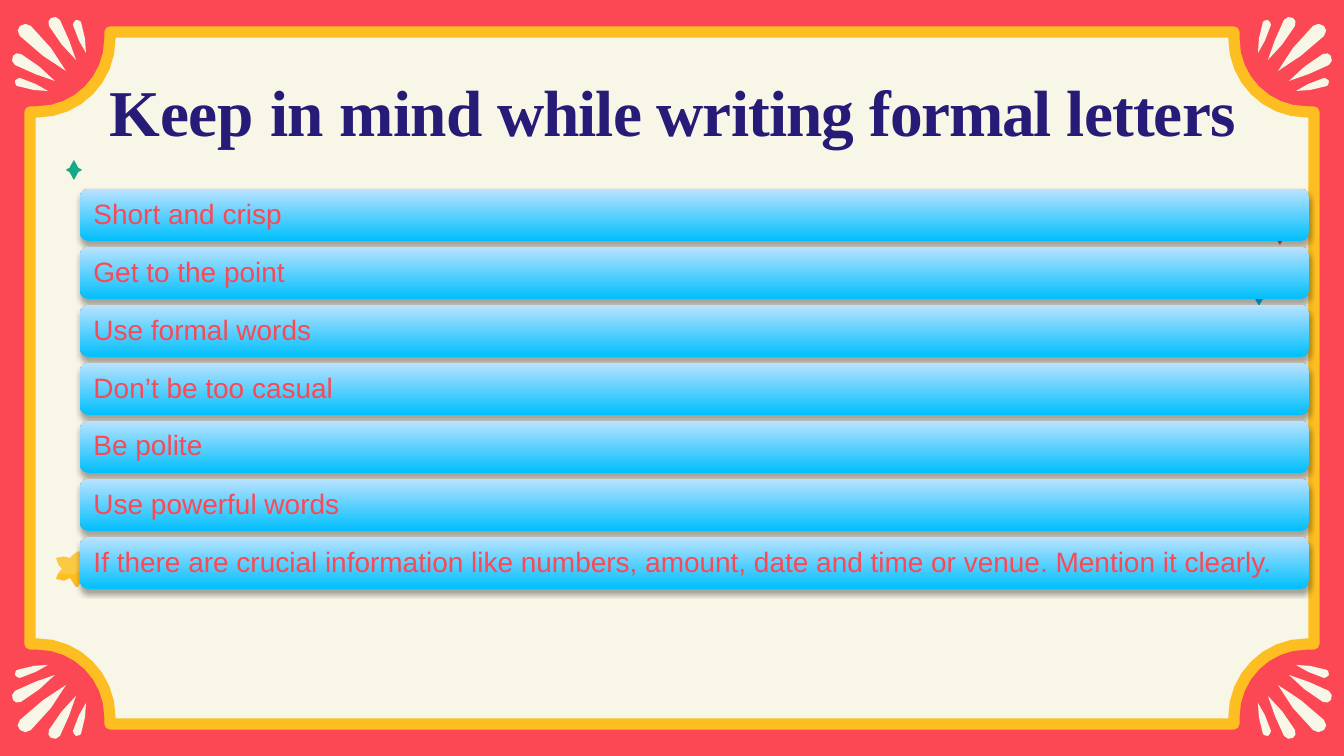
from dataclasses import dataclass

from lxml.etree import SubElement
from pptx import Presentation
from pptx.dml.color import RGBColor
from pptx.enum.shapes import MSO_SHAPE
from pptx.enum.text import MSO_ANCHOR, MSO_AUTO_SIZE, PP_ALIGN
from pptx.oxml.ns import qn
from pptx.util import Emu, Pt

WIDTH, HEIGHT = 1344, 756
EMU_PER_PX = 9144000 / WIDTH


@dataclass(frozen=True)
class Theme:
    red: str = "FB4854"
    cream: str = "F8F6E7"
    petal: str = "F7F6E7"
    gold: str = "FCBE20"
    blue: str = "03BDF9"
    green: str = "15A987"
    navy: str = "261B76"
    bar_bottom: str = "00BFFC"
    bar_top: str = "BAE2FF"
    title_font: str = "Times New Roman"
    body_font: str = "Arial"
    title_size: int = 35
    body_size: int = 15


THEME = Theme()

# Title pieces with their letter spacing in hundredths of a point
TITLE = [("Keep ", -10), ("in ", -30), ("mind while writing ", -50),
         ("formal ", -70), ("letters", -50)]
TIPS = [
    "Short and crisp",
    "Get to the point",
    "Use formal words",
    "Don’t be too casual",
    "Be polite",
    "Use powerful words",
    "If there are crucial information like numbers, amount, date and time "
    "or venue. Mention it clearly.",
]

# Bezier outlines: a start point, then three points for each curve
MIDDLE_PETAL = [(20, 36), (23, 39), (63, 74), (66, 71), (69, 68), (35, 28), (31, 26),
                (28, 23), (23, 23), (20, 26), (17, 28), (17, 33), (20, 36)]
SIDE_PETALS = [
    [(15, 65), (17, 66), (54, 83), (55, 81), (56, 78), (24, 55), (21, 54),
     (17, 52), (15, 54), (13, 56), (11, 59), (12, 63), (15, 65)],
    [(17, 86), (20, 87), (48, 94), (48, 91), (50, 89), (23, 79), (20, 78),
     (19, 78), (16, 79), (15, 81), (15, 83), (16, 86), (17, 86)],
]
STAR_TOP = [(90, 566), (86, 564), (82, 562), (82, 562), (82, 562), (82, 552), (79, 551),
            (77, 550), (70, 558), (70, 558), (70, 558), (58, 554), (56, 558),
            (55, 562), (62, 569), (62, 569), (60, 570), (59, 573), (58, 574),
            (66, 575), (78, 575), (90, 566)]
STAR_BOTTOM = [(93, 570), (94, 569), (91, 567), (90, 566), (78, 575), (66, 575), (58, 574),
               (56, 579), (56, 579), (56, 579), (59, 585), (70, 578), (70, 578),
               (74, 589), (78, 587), (78, 587), (82, 587), (82, 575), (82, 575),
               (94, 573), (93, 570), (93, 570)]


def px(length):
    return Emu(round(length * EMU_PER_PX))


def rgb(color):
    return RGBColor.from_string(color)


def flatten(bezier, steps=2):
    """Turn a chain of cubic curves into a list of points."""
    points = [bezier[0]]
    for start in range(0, len(bezier) - 1, 3):
        controls = bezier[start:start + 4]
        for step in range(1, steps + 1):
            t = step / steps
            weights = ((1 - t) ** 3, 3 * t * (1 - t) ** 2, 3 * t * t * (1 - t), t ** 3)
            points.append(tuple(sum(w * c[axis] for w, c in zip(weights, controls))
                                for axis in (0, 1)))
    return points


def flip(points, center_x=None, center_y=None):
    return [(x if center_x is None else 2 * center_x - x,
             y if center_y is None else 2 * center_y - y) for x, y in points]


def four_fold(quarter, center_x, center_y):
    """Complete a clockwise top left quarter to a closed outline."""
    return (quarter + flip(quarter, center_x)[::-1]
            + flip(quarter, center_x, center_y)
            + flip(quarter, None, center_y)[::-1])


def add_outline(slide, points, color, alpha=None):
    corners = [(px(x), px(y)) for x, y in points]
    builder = slide.shapes.build_freeform(*corners[0], scale=1.0)
    builder.add_line_segments(corners[1:], close=True)
    shape = builder.convert_to_shape()
    shape.shadow.inherit = False
    shape.fill.solid()
    shape.fill.fore_color.rgb = rgb(color)
    shape.line.fill.background()
    if alpha is not None:
        fill_color = shape._element.spPr.find(qn("a:solidFill"))[0]
        SubElement(fill_color, qn("a:alpha"), val=str(alpha * 1000))
    return shape


def add_frame(slide):
    bend = flatten([(37, 112), (78, 112), (110, 79), (110, 39)], steps=8)
    quarter = [(30, 112), *bend, (110, 32)]
    frame = add_outline(slide, four_fold(quarter, WIDTH / 2, HEIGHT / 2), THEME.cream)
    frame.line.color.rgb = rgb(THEME.gold)
    frame.line.width = Pt(6)


def add_corner_fans(slide):
    mirrored_sides = [[(y - 5, x + 5) for x, y in petal] for petal in SIDE_PETALS]
    for center_x in (None, WIDTH / 2):
        for center_y in (None, HEIGHT / 2):
            for petal in [MIDDLE_PETAL, *SIDE_PETALS, *mirrored_sides]:
                add_outline(slide, flip(flatten(petal), center_x, center_y), THEME.petal)


def add_sparkle(slide, x, y, half_width, half_height, color):
    def at(across, up):
        return x - across * half_width, y - up * half_height

    side = flatten([at(0.8, 0.12), at(0.8, 0.12), at(0.36, 0.12), at(0.18, 0.75)])
    add_outline(slide, four_fold([at(1, 0), *side, at(0, 1)], x, y), color)


def style_run(run, font, size, color):
    run.font.name = font
    run.font.size = Pt(size)
    run.font.color.rgb = rgb(color)


def set_insets(frame, left, top):
    frame.margin_left, frame.margin_top = px(left), px(top)
    frame.margin_right = frame.margin_bottom = 0
    frame.vertical_anchor = MSO_ANCHOR.MIDDLE
    frame.word_wrap = True


def format_title(slide):
    title = slide.shapes.title
    title.left, title.top, title.width, title.height = map(px, (106, 66, 1133, 85))
    # Bring the title in front of the frame
    slide.shapes._spTree.append(title._element)
    frame = title.text_frame
    frame.auto_size = MSO_AUTO_SIZE.NONE
    set_insets(frame, 0, 1)
    paragraph = frame.paragraphs[0]
    paragraph.alignment = PP_ALIGN.CENTER
    paragraph.space_before = Pt(0.8)
    paragraph.line_spacing = 1.04
    for words, spacing in TITLE:
        run = paragraph.add_run()
        run.text = words
        style_run(run, THEME.title_font, THEME.title_size, THEME.navy)
        run.font.bold = True
        run.font._element.set("spc", str(spacing))


def add_drop_shadow(shape):
    effects = SubElement(shape._element.spPr, qn("a:effectLst"))
    shadow = SubElement(effects, qn("a:outerShdw"), blurRad=str(Pt(3.1)),
                        dist=str(Pt(1.8)), dir="5400000", rotWithShape="0")
    color = SubElement(shadow, qn("a:srgbClr"), val="000000")
    SubElement(color, qn("a:alpha"), val="35000")


def add_tip_bar(slide, top, tip):
    bar = slide.shapes.add_shape(MSO_SHAPE.ROUNDED_RECTANGLE,
                                 *map(px, (80, top, 1229, 52)))
    bar.fill.gradient()
    bar.fill.gradient_angle = 90
    for stop, color in zip(bar.fill.gradient_stops, (THEME.bar_bottom, THEME.bar_top)):
        stop.color.rgb = rgb(color)
    bar.line.fill.background()
    add_drop_shadow(bar)
    set_insets(bar.text_frame, 11, 0)
    paragraph = bar.text_frame.paragraphs[0]
    paragraph.text = tip
    paragraph.alignment = PP_ALIGN.LEFT
    paragraph.line_spacing = 0.9
    style_run(paragraph.runs[0], THEME.body_font, THEME.body_size, THEME.red)


def main():
    deck = Presentation()
    deck.slide_width, deck.slide_height = px(WIDTH), px(HEIGHT)
    slide = deck.slides.add_slide(deck.slide_layouts[5])
    slide.background.fill.solid()
    slide.background.fill.fore_color.rgb = rgb(THEME.red)

    add_frame(slide)
    add_corner_fans(slide)
    add_outline(slide, flatten(STAR_TOP), THEME.gold, alpha=82)
    add_outline(slide, flatten(STAR_BOTTOM), THEME.gold)
    add_sparkle(slide, 1280, 235, 8, 10, THEME.red)
    add_sparkle(slide, 1259, 288, 14, 18, THEME.blue)
    add_sparkle(slide, 74, 170, 8, 10, THEME.green)
    format_title(slide)
    for row, tip in enumerate(TIPS):
        add_tip_bar(slide, 189 + 58 * row, tip)
    deck.save("out.pptx")


if __name__ == "__main__":
    main()
